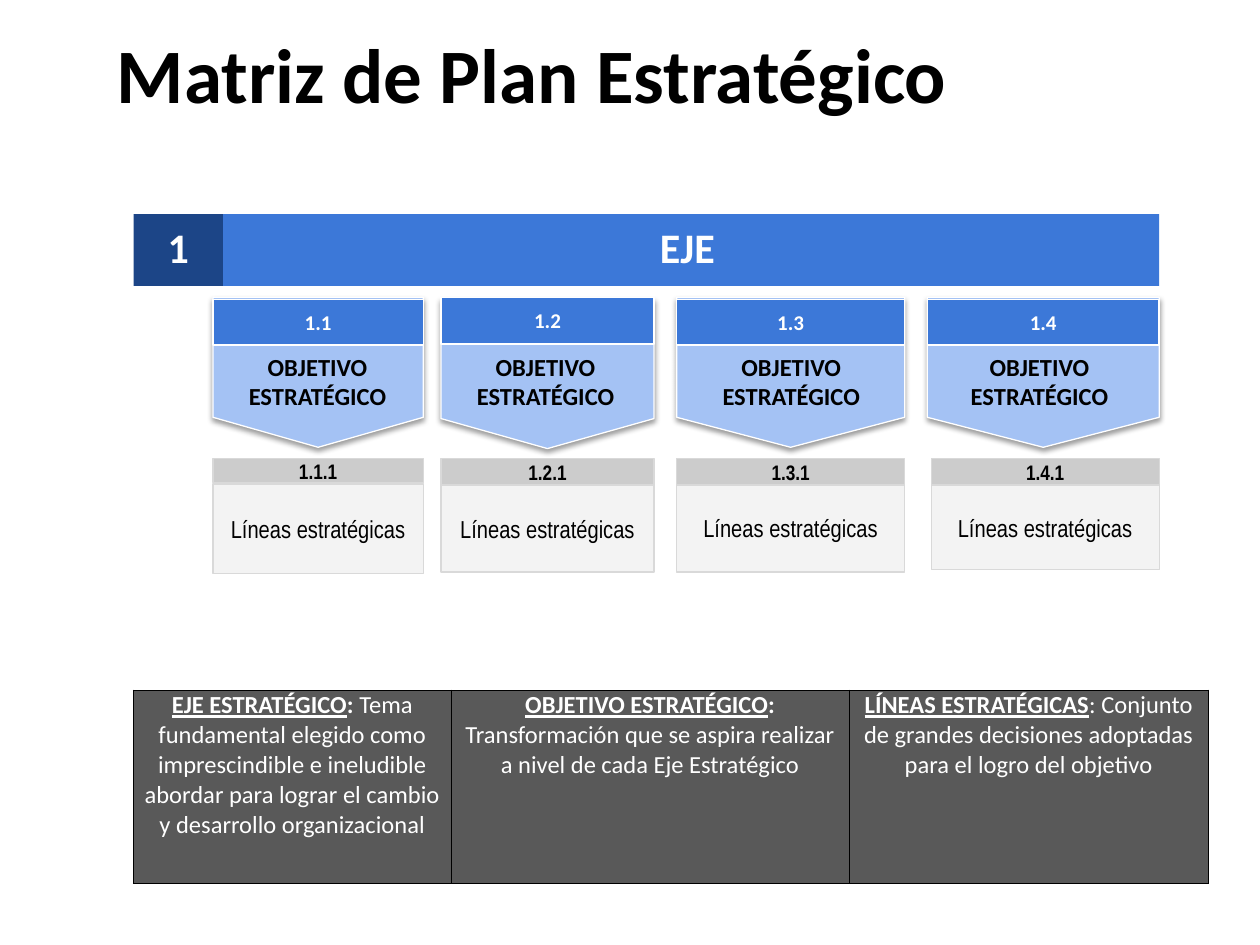
from dataclasses import dataclass

import pptx
import pptx.dml.color
import pptx.enum.shapes
import pptx.enum.text
import pptx.oxml
import pptx.oxml.ns
import pptx.util

SHAPE = pptx.enum.shapes.MSO_SHAPE
ANCHOR = pptx.enum.text.MSO_ANCHOR
ALIGN = pptx.enum.text.PP_ALIGN
WHITE, BLACK = "FFFFFF", "000000"
BLUE, NAVY, SKY = "3C78D8", "1C4587", "A4C2F4"
GREY, PALE, EDGE, CHARCOAL = "CCCCCC", "F3F3F3", "D9D9D9", "595959"
DRAWING_NS = pptx.oxml.ns.nsdecls("a")

# The slide is a grid of 100 columns by 75 rows of square cells.
GRID_COLUMNS, GRID_ROWS = 100, 75
CELL = pptx.util.Inches(10) // GRID_COLUMNS


@dataclass(frozen=True)
class Area:
    left: float
    top: float
    width: float
    height: float

    def emu(self) -> tuple[int, ...]:
        return tuple(round(side * CELL) for side in
                     (self.left, self.top, self.width, self.height))


@dataclass(frozen=True)
class TextStyle:
    size: float
    color: str = BLACK
    font: str = "Calibri"
    bold: bool = True
    align: ALIGN = ALIGN.CENTER
    inset: float = 0.1
    spacing: float = 1.0


@dataclass(frozen=True)
class Objective:
    left: float
    width: float
    label_left: float
    line_left: float
    line_width: float
    body_top: float
    body_height: float
    number_height: float = 2.1
    pennant_top: float = 23.6
    header_top: float = 23.8
    header_height: float = 3.6


@dataclass(frozen=True)
class Definition:
    term: str
    colon_bold: bool
    lines: tuple[str, ...]
    width: float


AXIS = TextStyle(24, WHITE, spacing=0.9)
HEADER = TextStyle(12, WHITE, inset=1)
LABEL = TextStyle(14)
NUMBER = TextStyle(12, font="Arial Narrow")
BODY = TextStyle(14, font="Arial Narrow", bold=False)
TITLE = TextStyle(44, align=ALIGN.LEFT, inset=1, spacing=0.9)
DEFINITION_SIZE = 14

OBJECTIVES = (
    Objective(16.9, 16.7, 15.4, 16.9, 16.7, 38.4, 7.1, number_height=1.9),
    Objective(35, 16.9, 33.5, 35, 16.9, 38.5, 6.9,
              pennant_top=23.7, header_top=23.6, header_height=3.7),
    Objective(53.7, 18.1, 53, 53.7, 18.1, 38.3, 7.1),
    Objective(73.6, 18.4, 72.7, 73.9, 18.1, 38.5, 6.7),
)
DEFINITIONS = (
    Definition("EJE ESTRATÉGICO", True,
               ("Tema fundamental elegido como imprescindible e ineludible "
                "abordar para lograr el cambio", "y desarrollo organizacional"), 25.2),
    Definition("OBJETIVO ESTRATÉGICO", True,
               ("Transformación que se aspira realizar",
                "a nivel de cada Eje Estratégico"), 31.6),
    Definition("LÍNEAS ESTRATÉGICAS", False,
               ("Conjunto", "de grandes decisiones adoptadas para el logro del objetivo"), 28.5),
)


def rgb(color: str) -> pptx.dml.color.RGBColor:
    return pptx.dml.color.RGBColor.from_string(color)


def format_run(run, size: float, color: str, font: str, bold: bool) -> None:
    run.font.size = pptx.util.Pt(size)
    run.font.name = font
    run.font.bold = bold
    run.font.color.rgb = rgb(color)


def write(shape, text: str, style: TextStyle, anchor=ANCHOR.MIDDLE) -> None:
    frame = shape.text_frame
    frame.text = text
    frame.word_wrap = True
    frame.vertical_anchor = anchor
    frame.margin_left = frame.margin_right = round(style.inset * CELL)
    frame.margin_top = frame.margin_bottom = 0
    paragraph = frame.paragraphs[0]
    paragraph.alignment = style.align
    paragraph.line_spacing = style.spacing
    format_run(paragraph.runs[0], style.size, style.color, style.font, style.bold)


def add_block(slide, area: Area, fill: str, edge: str | None = None, kind=SHAPE.RECTANGLE):
    block = slide.shapes.add_shape(kind, *area.emu())
    block.shadow.inherit = False
    block.fill.solid()
    block.fill.fore_color.rgb = rgb(fill)
    if edge:
        block.line.color.rgb = rgb(edge)
        block.line.width = pptx.util.Pt(0.75)
    else:
        block.line.fill.background()
    return block


def add_label(slide, area: Area, text: str, style: TextStyle, anchor=ANCHOR.MIDDLE):
    label = slide.shapes.add_textbox(*area.emu())
    write(label, text, style, anchor)
    return label


def drop_shadow(shape) -> None:
    effects = shape._element.spPr.find(pptx.oxml.ns.qn("a:effectLst"))
    effects.append(pptx.oxml.parse_xml(
        f'<a:outerShdw {DRAWING_NS} blurRad="{pptx.util.Pt(3.1)}" dist="{pptx.util.Pt(1.6)}" '
        f'dir="5400000" rotWithShape="0"><a:srgbClr val="{BLACK}"><a:alpha val="38000"/>'
        '</a:srgbClr></a:outerShdw>'))


def add_objective(slide, number: str, objective: Objective) -> None:
    """Draw the pennant of an objective and the strategic line below it."""
    left, width = objective.left, objective.width
    pennant = add_block(slide, Area(left, objective.pennant_top, width, 11.9), SKY, WHITE,
                        SHAPE.FLOWCHART_OFFPAGE_CONNECTOR)
    drop_shadow(pennant)
    label = add_label(slide, Area(objective.label_left, 27, 16.7, 6.5),
                      "OBJETIVO ESTRATÉGICO", LABEL)
    label.text_frame.paragraphs[0]._p.get_or_add_pPr().set("marL", str(round(2.9 * CELL)))
    header = add_block(slide, Area(left, objective.header_top, width, objective.header_height),
                       BLUE, WHITE)
    write(header, number, HEADER)
    left, width = objective.line_left, objective.line_width
    body = add_block(slide, Area(left, objective.body_top, width, objective.body_height),
                     PALE, EDGE)
    write(body, "Líneas estratégicas", BODY)
    bar = add_block(slide, Area(left, 36.4, width, objective.number_height), GREY, EDGE)
    write(bar, f"{number}.1", NUMBER)


def border_cell(cell, widths: dict[str, float]) -> None:
    properties = cell._tc.get_or_add_tcPr()
    for position, (side, points) in enumerate(widths.items()):
        properties.insert(position, pptx.oxml.parse_xml(
            f'<a:{side} {DRAWING_NS} w="{pptx.util.Pt(points)}"><a:solidFill>'
            f'<a:srgbClr val="{BLACK}"/></a:solidFill></a:{side}>'))


def define(cell, definition: Definition) -> None:
    paragraph = cell.text_frame.paragraphs[0]
    paragraph.alignment = ALIGN.CENTER

    def add_part(text: str, bold: bool, underline: bool = False) -> None:
        run = paragraph.add_run()
        run.text = text
        format_run(run, DEFINITION_SIZE, WHITE, "Calibri", bold)
        run.font.underline = underline

    add_part(definition.term, True, True)
    add_part(":", definition.colon_bold)
    first, *rest = definition.lines
    add_part(f" {first}", False)
    for line in rest:
        paragraph.add_line_break()
        add_part(line, False)


def add_definitions(slide, area: Area) -> None:
    table = slide.shapes.add_table(1, len(DEFINITIONS), *area.emu()).table
    table.first_row = table.horz_banding = False
    for index, definition in enumerate(DEFINITIONS):
        table.columns[index].width = round(definition.width * CELL)
        cell = table.cell(0, index)
        cell.margin_left = cell.margin_right = cell.margin_top = cell.margin_bottom = 0
        cell.fill.solid()
        cell.fill.fore_color.rgb = rgb(CHARCOAL)
        border_cell(cell, {"lnL": 0.5 if index else 1, "lnR": 0.5, "lnT": 1, "lnB": 0.5})
        define(cell, definition)


def main() -> None:
    deck = pptx.Presentation()
    deck.slide_width, deck.slide_height = GRID_COLUMNS * CELL, GRID_ROWS * CELL
    slide = deck.slides.add_slide(deck.slide_layouts[6])
    add_label(slide, Area(8.3, 2.9, 88.3, 12.5), "Matriz de Plan Estratégico", TITLE, ANCHOR.TOP)
    write(add_block(slide, Area(17.1, 17, 74.9, 5.7), BLUE), "EJE", AXIS)
    write(add_block(slide, Area(10.6, 17, 7.1, 5.7), NAVY), "1", AXIS)
    for order, objective in enumerate(OBJECTIVES, start=1):
        add_objective(slide, f"1.{order}", objective)
    add_definitions(slide, Area(10.6, 54.8, 85.3, 15.3))
    deck.save("out.pptx")


if __name__ == "__main__":
    main()
